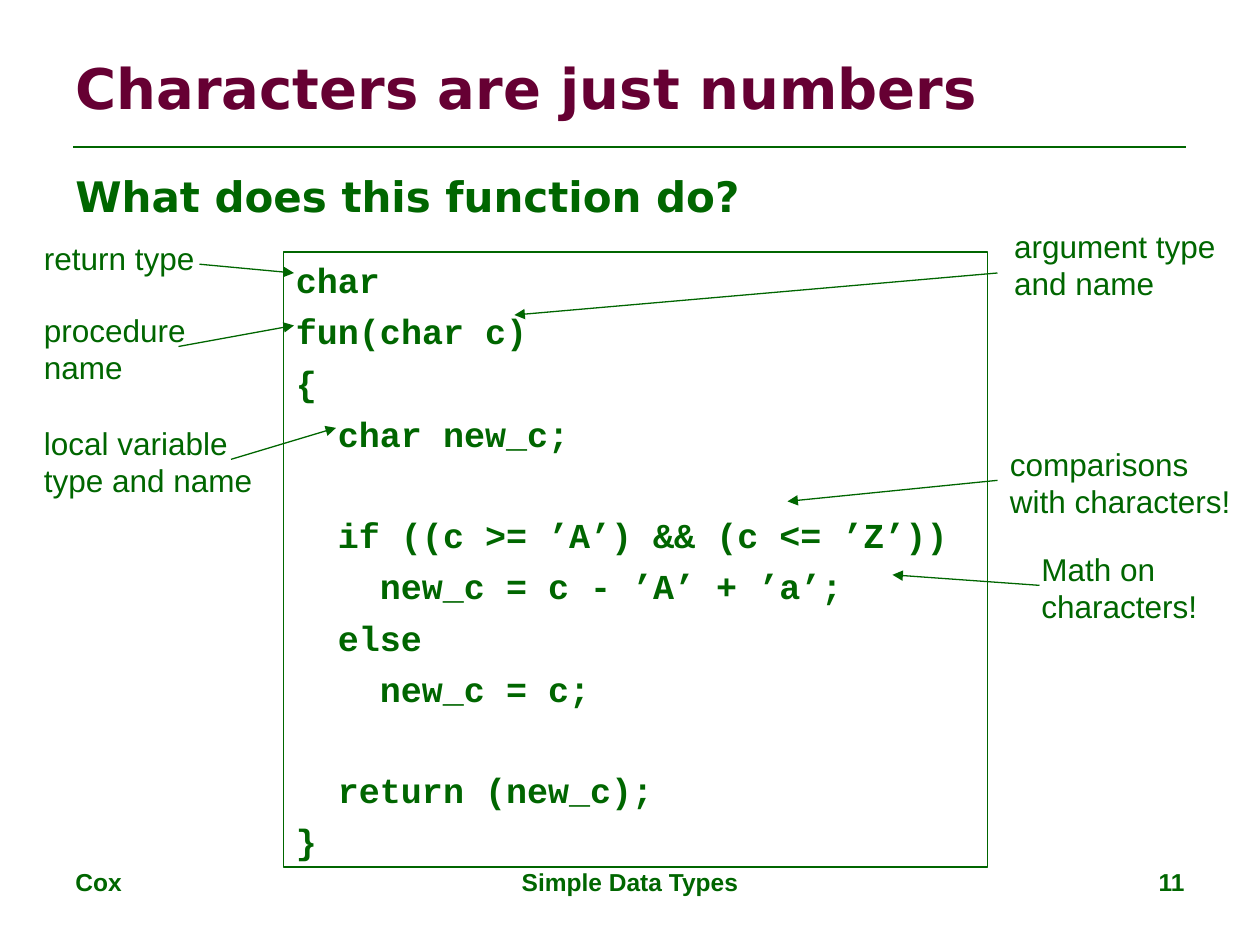
import pptx
import pptx.util
import pptx.dml.color
import pptx.enum.shapes
import pptx.enum.text
import pptx.oxml.ns
import lxml.etree

Pt = pptx.util.Pt
Align = pptx.enum.text.PP_ALIGN
Anchor = pptx.enum.text.MSO_ANCHOR

HUES = {"green": "006600", "plum": "660033"}
PITCH = 28.05
LEAD = 5.4
STEP = 24

CODE = [
    (0, 0, "char"),
    (0, 0, "fun(char c)"),
    (0, 0, "{"),
    (1, 0, "char new_c;"),
    (1, 1, "if ((c >= ’A’) && (c <= ’Z’))"),
    (2, 0, "new_c = c - ’A’ + ’a’;"),
    (1, 0, "else"),
    (2, 0, "new_c = c;"),
    (1, 1, "return (new_c);"),
    (0, 0, "}"),
]

NOTES = [
    ((18, 133, 102, 29), ["return type"], (114, 151, 168, 156)),
    ((18, 174, 102, 50), ["procedure", "name"], (102, 198, 168, 186)),
    ((572.4, 126, 132, 50), ["argument type", "and name"], (570, 156, 294, 180)),
    ((18, 238.5, 136, 50), ["local variable", "type and name"], (132, 262.5, 192, 244.5)),
    ((588, 310.5, 106, 50), ["Math on", "characters!"], (594, 334.5, 510, 328.5)),
    ((570, 250.5, 143, 50), ["comparisons", "with characters!"], (570, 274.5, 450, 286.5)),
]


def hue(name):
    return pptx.dml.color.RGBColor.from_string(HUES[name])


def write(frame, lines, size, face="Arial", bold=True, color="green", align=Align.LEFT):
    frame.word_wrap = True
    frame.text = "\n".join(lines)
    for para in frame.paragraphs:
        para.alignment = align
        for run in para.runs:
            run.font.size = Pt(size)
            run.font.name = face
            run.font.bold = bold
            run.font.color.rgb = hue(color)


def label(slide, box, lines, size, **style):
    frame = slide.shapes.add_textbox(*map(Pt, box)).text_frame
    write(frame, lines, size, **style)
    return frame


def rule(slide, ends, width, arrow=False):
    kind = pptx.enum.shapes.MSO_CONNECTOR.STRAIGHT
    line = slide.shapes.add_connector(kind, *map(Pt, ends))
    line.line.color.rgb = hue("green")
    line.line.width = Pt(width)
    qn = pptx.oxml.ns.qn
    if arrow:
        stroke = line.line._get_or_add_ln()
        lxml.etree.SubElement(stroke, qn("a:tailEnd"), type="triangle")
    lxml.etree.SubElement(line._element.spPr, qn("a:effectLst"))


def header(slide, box):
    left, top, width, height = box
    title = label(slide, (left, top, width, 56), ["Characters are just numbers"], 32,
                  face="DejaVu Sans", color="plum")
    title.vertical_anchor = Anchor.MIDDLE
    base = top + 62.5
    rule(slide, (left + 6, base, left + width - 6, base), 1.5)
    ask = label(slide, (left, top + 72, width, height - 72), ["What does this function do?"], 24,
                face="DejaVu Sans")
    ask.paragraphs[0].space_before = Pt(2)


def listing(slide, box):
    kind = pptx.enum.shapes.MSO_SHAPE.RECTANGLE
    panel = slide.shapes.add_shape(kind, *map(Pt, box))
    panel.shadow.inherit = False
    panel.fill.background()
    panel.line.color.rgb = hue("green")
    panel.line.width = Pt(0.75)
    frame = panel.text_frame
    frame.vertical_anchor = Anchor.TOP
    write(frame, [text for _, _, text in CODE], 20, face="Courier New")
    for para, (depth, skip, _) in zip(frame.paragraphs, CODE):
        para.space_before = Pt(LEAD + skip * PITCH)
        props = para._p.get_or_add_pPr()
        props.set("marL", str(Pt(depth * STEP)))
        props.set("indent", "0")


def notes(slide):
    for box, lines, ends in NOTES:
        rule(slide, ends, 0.75, arrow=True)
        label(slide, box, lines, 18, bold=False)


def footer(slide, box):
    left, top, width, height = box
    side, mid = 168, 228
    label(slide, (left, top, side, height), ["Cox"], 14)
    label(slide, (left + (width - mid) / 2, top, mid, height), ["Simple Data Types"], 14,
          align=Align.CENTER)
    label(slide, (left + width - side, top, side, height), ["11"], 14, align=Align.RIGHT)


def main():
    deck = pptx.Presentation()
    deck.slide_width, deck.slide_height = Pt(720), Pt(540)
    slide = deck.slides.add_slide(deck.slide_layouts[6])
    header(slide, (36, 21.6, 648, 110))
    listing(slide, (162, 144, 402.5, 351.4))
    notes(slide)
    footer(slide, (36, 492, 648, 37.4))
    deck.save("out.pptx")


if __name__ == "__main__":
    main()
